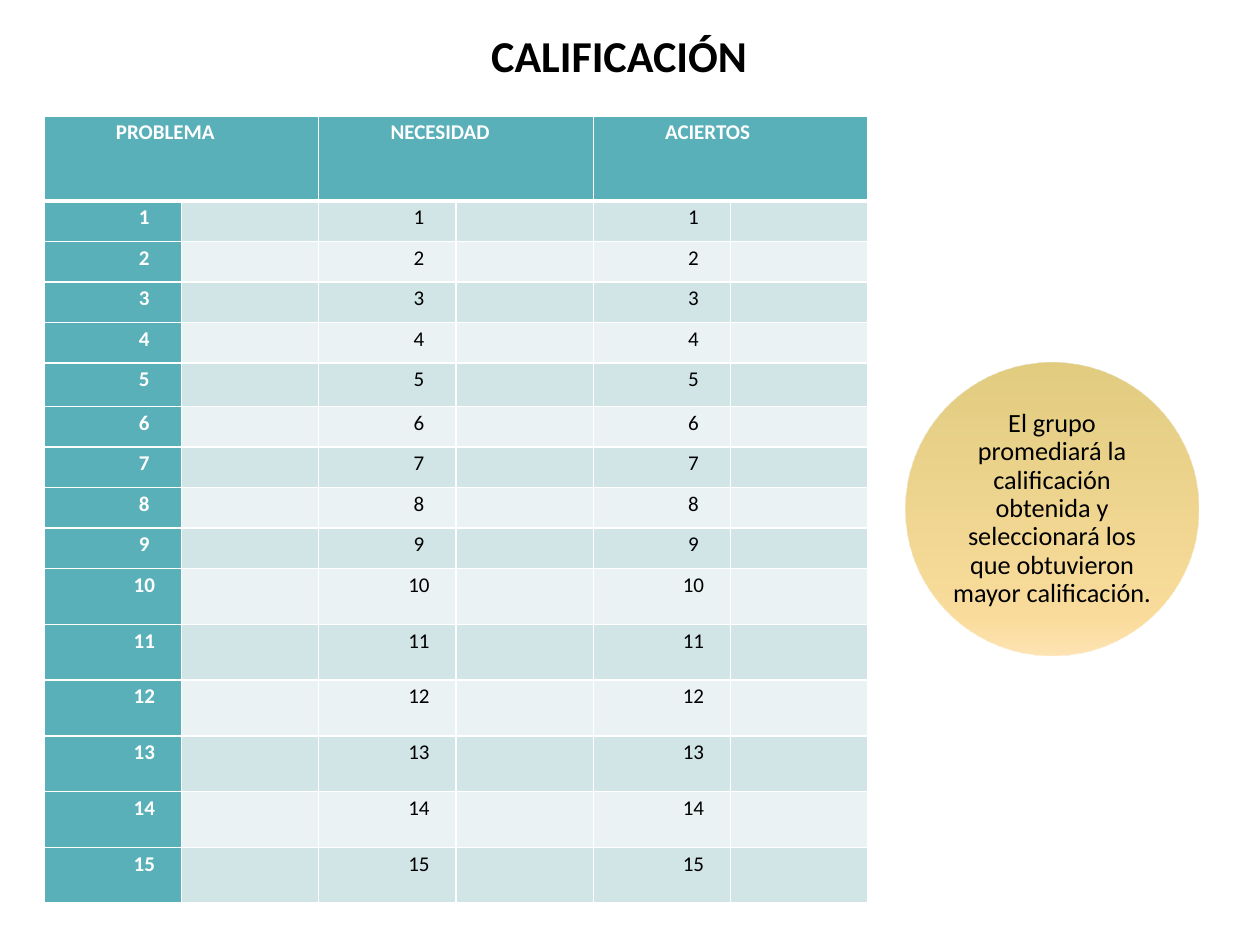
from lxml.etree import SubElement
from pptx import Presentation
from pptx.dml.color import RGBColor
from pptx.enum.shapes import MSO_SHAPE
from pptx.enum.text import MSO_ANCHOR, MSO_AUTO_SIZE, PP_ALIGN
from pptx.oxml import parse_xml
from pptx.oxml.ns import nsdecls, qn
from pptx.util import Inches, Pt

WHITE = RGBColor(0xFF, 0xFF, 0xFF)
BLACK = RGBColor(0x00, 0x00, 0x00)
TEAL = RGBColor(0x59, 0xB0, 0xB9)
BAND_DARK = RGBColor(0xD1, 0xE4, 0xE6)
BAND_LIGHT = RGBColor(0xEA, 0xF2, 0xF3)
GOLD_STOPS = [
    (0, RGBColor(0xFF, 0xCA, 0x6B)),
    (12, RGBColor(0xF7, 0xBC, 0x3A)),
    (100, RGBColor(0xC4, 0x9A, 0x00)),
]

HEADINGS = ["PROBLEMA", "NECESIDAD", "ACIERTOS"]
ROW_HEIGHTS = [0.67] + [0.32] * 4 + [0.34] + [0.32] * 4 + [0.44] * 6
NOTE = ("El grupo promediará la calificación obtenida y seleccionará "
        "los que obtuvieron mayor calificación.")


def apply_format(target, values):
    for name, value in values.items():
        setattr(target, name, value)


def write_text(paragraph, text, size, color, bold=False):
    run = paragraph.add_run()
    run.text = text
    apply_format(run.font, {"name": "Calibri", "size": Pt(size), "bold": bold})
    run.font.color.rgb = color


def add_title(slide, left, top, width, height):
    title = slide.shapes.title
    apply_format(title, {"left": left, "top": top, "width": width, "height": height})
    frame = title.text_frame
    apply_format(frame, {
        "auto_size": MSO_AUTO_SIZE.NONE, "word_wrap": True,
        "vertical_anchor": MSO_ANCHOR.TOP, "margin_top": 0, "margin_bottom": 0,
    })
    paragraph = frame.paragraphs[0]
    apply_format(paragraph, {"alignment": PP_ALIGN.RIGHT, "line_spacing": 0.85})
    write_text(paragraph, "CALIFICACIÓN", 25.2, BLACK, bold=True)


def set_borders(cell, widths):
    """Draw white borders; widths maps each side (L, R, T, B) to points."""
    properties = cell._tc.get_or_add_tcPr()
    for position, (side, width) in enumerate(widths.items()):
        border = parse_xml(
            f'<a:ln{side} {nsdecls("a")} w="{Pt(width)}"><a:solidFill>'
            f'<a:srgbClr val="{WHITE}"/></a:solidFill></a:ln{side}>')
        properties.insert(position, border)


def style_cell(cell, row, column):
    if row == 0 or column == 0:
        color = TEAL
    else:
        color = BAND_DARK if row % 2 else BAND_LIGHT
    cell.fill.solid()
    cell.fill.fore_color.rgb = color
    apply_format(cell, {
        "margin_left": Inches(0.07), "margin_right": Inches(0.07),
        "margin_top": 0, "margin_bottom": 0,
    })
    set_borders(cell, {"L": 1, "R": 1, "T": 3 if row == 1 else 1,
                       "B": 3 if row == 0 else 1})


def write_cell(cell, text, alignment, color, bold):
    paragraph = cell.text_frame.paragraphs[0]
    apply_format(paragraph, {"alignment": alignment, "line_spacing": 1.15})
    paragraph._p.get_or_add_pPr().set("marL", str(Inches(0.5)))
    write_text(paragraph, text, 12, color, bold)


def add_score_table(slide, left, top, width, height):
    column_count = 2 * len(HEADINGS)
    table = slide.shapes.add_table(
        len(ROW_HEIGHTS), column_count, left, top, width, height).table
    for column in table.columns:
        column.width = width // column_count
    for row, share in zip(table.rows, ROW_HEIGHTS):
        row.height = int(height * share / sum(ROW_HEIGHTS))

    for row in range(len(ROW_HEIGHTS)):
        for column in range(column_count):
            style_cell(table.cell(row, column), row, column)

    for group, heading in enumerate(HEADINGS):
        column = 2 * group
        header = table.cell(0, column)
        header.merge(table.cell(0, column + 1))
        write_cell(header, heading, PP_ALIGN.JUSTIFY, WHITE, True)
        first = group == 0
        for number in range(1, len(ROW_HEIGHTS)):
            write_cell(table.cell(number, column), str(number), PP_ALIGN.CENTER,
                       WHITE if first else BLACK, first)


def fill_with_gold(circle):
    """Translucent gradient running from bottom to top."""
    circle.fill.gradient()
    gradient = circle._element.spPr.find(qn("a:gradFill"))
    stops = gradient.find(qn("a:gsLst"))
    for stop in list(stops):
        stops.remove(stop)
    for percent, color in GOLD_STOPS:
        stop = SubElement(stops, qn("a:gs"), pos=str(percent * 1000))
        shade = SubElement(stop, qn("a:srgbClr"), val=str(color))
        SubElement(shade, qn("a:alpha"), val="50000")
    circle.fill.gradient_angle = 90


def add_note_circle(slide, left, top, diameter):
    group = slide.shapes.add_group_shape()
    circle = group.shapes.add_shape(MSO_SHAPE.OVAL, left, top, diameter, diameter)
    circle.shadow.inherit = False
    circle.line.fill.background()
    fill_with_gold(circle)

    inset = Inches(0.34)
    side = diameter - 2 * inset
    frame = group.shapes.add_textbox(left + inset, top + inset, side, side).text_frame
    apply_format(frame, {
        "word_wrap": True, "vertical_anchor": MSO_ANCHOR.MIDDLE,
        "margin_left": 0, "margin_right": 0, "margin_top": 0, "margin_bottom": 0,
    })
    paragraph = frame.paragraphs[0]
    apply_format(paragraph, {"alignment": PP_ALIGN.CENTER, "line_spacing": 0.9})
    write_text(paragraph, NOTE, 15, BLACK)


def main():
    presentation = Presentation()
    apply_format(presentation, {"slide_width": Inches(10), "slide_height": Inches(7.5)})
    slide = presentation.slides.add_slide(presentation.slide_layouts[5])
    add_score_table(slide, Inches(0.35), Inches(0.92), Inches(6.54), Inches(6.25))
    add_title(slide, Inches(2.95), Inches(0.29), Inches(3.08), Inches(0.71))
    add_note_circle(slide, Inches(7.19), Inches(2.88), Inches(2.32))
    presentation.save("out.pptx")


if __name__ == "__main__":
    main()
